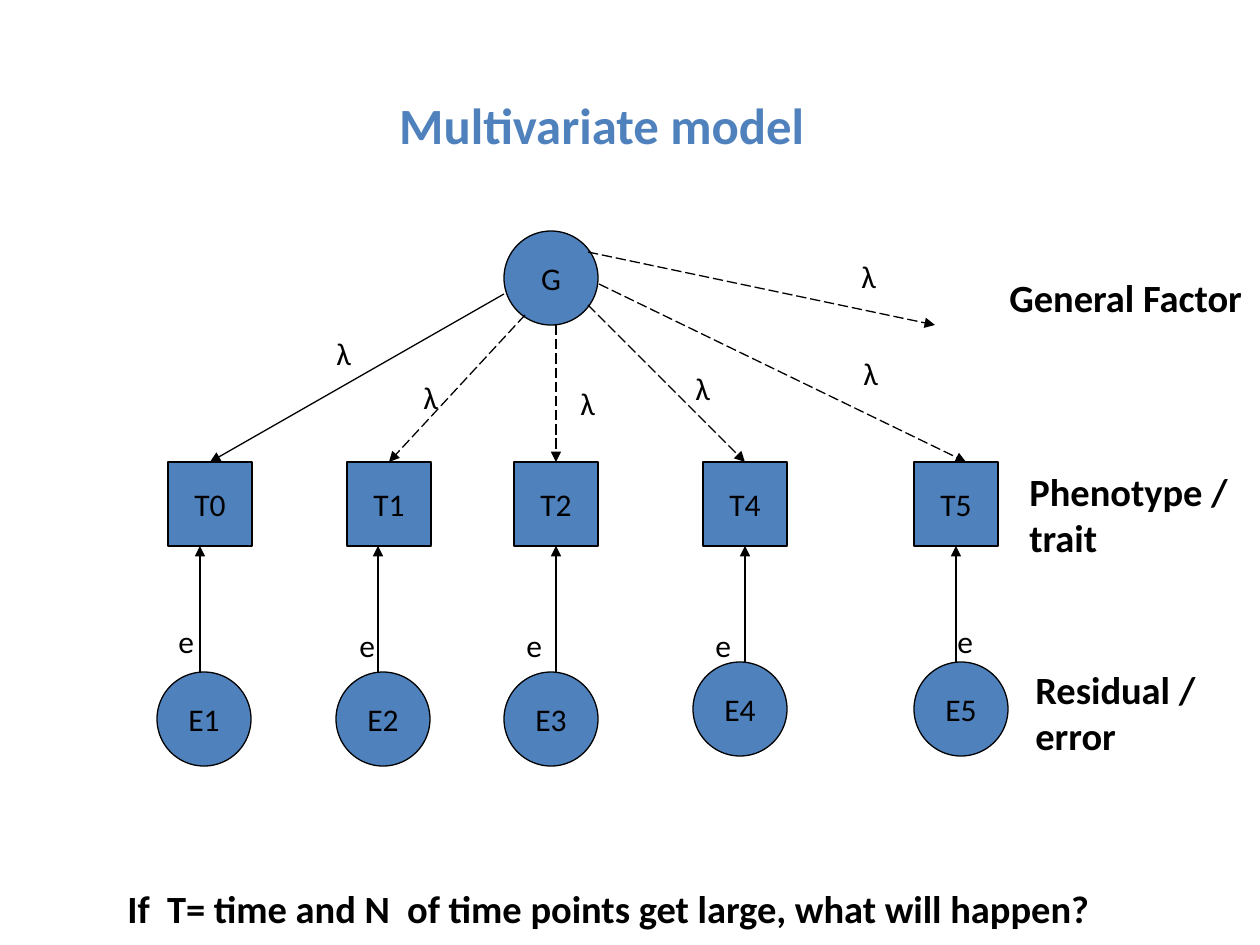
import pptx
import pptx.util
import pptx.dml.color
import pptx.enum.dml
import pptx.enum.shapes
import pptx.enum.text
import pptx.oxml

PX = 914400 / 126
BLUE, BLACK = "4F81BD", "000000"
SQUARE, CIRCLE, TRAIT_Y = 84, 94, 462
TOP, BOTTOM = 0, 2

FACTOR = ("G", 504, 231)
TRAITS = [("T0", 168), ("T1", 347), ("T2", 514), ("T4", 703), ("T5", 914)]
ERRORS = [("E1", 157, 672), ("E2", 336, 672), ("E3", 504, 672), ("E4", 693, 662), ("E5", 914, 662)]
LOADINGS = [
    ((504, 294), (210, 462), "T0", False),
    ((525, 315), (389, 462), "T1", True),
    ((556, 325), (556, 462), "T2", True),
    ((588, 305), (745, 462), "T4", True),
    ((599, 284), (966, 462), None, True),
    ((588, 252), (935, 325), None, True),
]
RESIDUALS = [
    ((200, 672), (200, 546), None),
    ((378, 672), (378, 546), None),
    ((556, 672), (556, 546), "T2"),
    ((745, 662), (745, 546), "T4"),
    ((956, 662), (956, 546), "T5"),
]
LAMBDAS = [(324, 328), (411, 372), (568, 378), (683, 363), (851, 348), (849, 251)]
RESIDUAL_LABELS = [(166, 616), (347, 620), (514, 620), (703, 620), (945, 616)]
HEADINGS = [
    ("General Factor", 997, 268, 261, 59, False),
    ("Phenotype / trait", 1017, 462, 238, 106, True),
    ("Residual / error", 1023, 660, 233, 106, True),
    ("If  T= time and N  of time points get large, what will happen?", 115, 879, 999, 59, False),
]


def px(n):
    return pptx.util.Emu(round(n * PX))


def rgb(color):
    return pptx.dml.color.RGBColor.from_string(color)


def write(s, text, size=18, bold=False, color=BLACK, centred=False, wrap=False):
    tf = s.text_frame
    tf.word_wrap = wrap
    if centred:
        tf.vertical_anchor = pptx.enum.text.MSO_ANCHOR.MIDDLE
    p = tf.paragraphs[0]
    p.alignment = pptx.enum.text.PP_ALIGN.CENTER if centred else pptx.enum.text.PP_ALIGN.LEFT
    r = p.add_run()
    r.text = text
    r.font.name = "Calibri"
    r.font.size = pptx.util.Pt(size)
    r.font.bold = bold
    r.font.color.rgb = rgb(color)


def add_node(shapes, kind, text, x, y, side):
    s = shapes.add_shape(kind, px(x), px(y), px(side), px(side))
    s.shadow.inherit = False
    s.fill.solid()
    s.fill.fore_color.rgb = rgb(BLUE)
    s.line.color.rgb = rgb(BLACK)
    s.line.width = pptx.util.Pt(0.75)
    write(s, text, centred=True)
    return s


def add_arrow(shapes, start, end, target=None, site=TOP, dashed=False):
    s = shapes.add_connector(pptx.enum.shapes.MSO_CONNECTOR.STRAIGHT,
                             *map(px, start + end))
    if target is not None:
        s.end_connect(target, site)
    s.line.color.rgb = rgb(BLACK)
    s.line.width = pptx.util.Pt(0.75)
    if dashed:
        s.line.dash_style = pptx.enum.dml.MSO_LINE.LONG_DASH
    ln = s.line._get_or_add_ln()
    tail = pptx.oxml.ns.qn("a:tailEnd")
    ln.append(ln.makeelement(tail, {"type": "triangle"}))
    ln.getparent().append(ln.makeelement(pptx.oxml.ns.qn("a:effectLst"), {}))


def add_text(shapes, text, x, y, w, h, **style):
    write(shapes.add_textbox(px(x), px(y), px(w), px(h)), text, **style)


def main():
    prs = pptx.Presentation()
    prs.slide_width = pptx.util.Inches(10)
    prs.slide_height = pptx.util.Inches(7.5)
    shapes = prs.slides.add_slide(prs.slide_layouts[6]).shapes
    kinds = pptx.enum.shapes.MSO_SHAPE

    traits = {name: add_node(shapes, kinds.RECTANGLE, name, x, TRAIT_Y, SQUARE)
              for name, x in TRAITS}
    for name, x, y in [FACTOR] + ERRORS:
        add_node(shapes, kinds.OVAL, name, x, y, CIRCLE)

    for start, end, trait, dashed in LOADINGS:
        add_arrow(shapes, start, end, traits.get(trait), TOP, dashed)
    for start, end, trait in RESIDUALS:
        add_arrow(shapes, start, end, traits.get(trait), BOTTOM)

    for x, y in LAMBDAS:
        add_text(shapes, "λ", x, y, 40, 50)
    for x, y in RESIDUAL_LABELS:
        add_text(shapes, "e", x, y, 45, 54)
    for text, x, y, w, h, wrap in HEADINGS:
        add_text(shapes, text, x, y, w, h, size=22, bold=True, wrap=wrap)
    add_text(shapes, "Multivariate model", 35, 45, 1134, 158,
             size=29, bold=True, color=BLUE, centred=True, wrap=True)

    prs.save("out.pptx")


if __name__ == "__main__":
    main()
